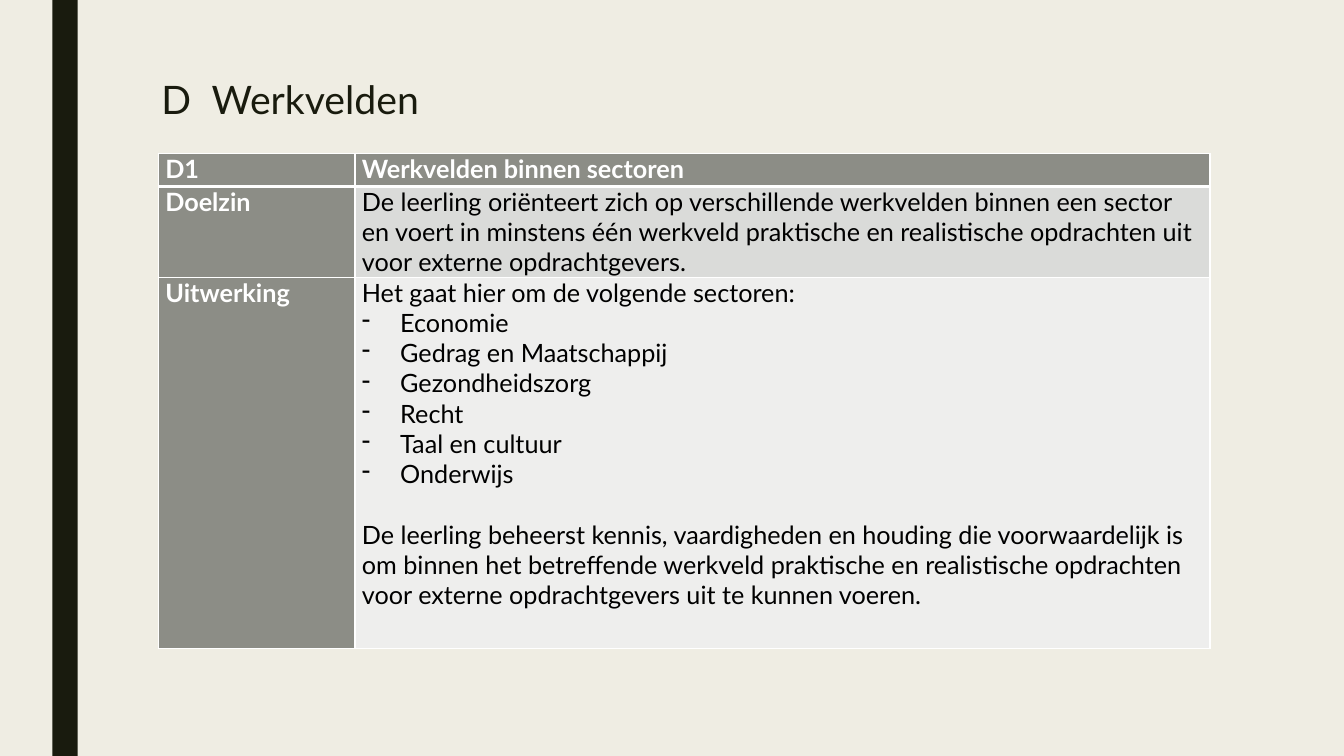
from dataclasses import dataclass

from lxml.etree import SubElement
from pptx import Presentation
from pptx.dml.color import RGBColor
from pptx.enum.shapes import MSO_SHAPE
from pptx.enum.text import MSO_ANCHOR, MSO_AUTO_SIZE, PP_ALIGN
from pptx.oxml import parse_xml
from pptx.oxml.ns import nsdecls, qn
from pptx.util import Inches, Pt

SLIDE_WIDTH, SLIDE_HEIGHT = 13.33, 7.5
FONT = "Lato"
COLORS = {
    "background": "EFEDE3",
    "dark": "191B0E",
    "heading": "8C8D86",
    "goal": "DADBD9",
    "details": "EEEEED",
    "white": "FFFFFF",
    "black": "000000",
}
COLUMN_WIDTHS = (1.95, 8.48)
TABLE_LEFT, TABLE_TOP = 1.57, 1.52
BULLET_INDENT = 0.38
BODY_SIZE = 18


@dataclass(frozen=True)
class Line:
    text: str
    bulleted: bool = False
    space_before: float = 0


@dataclass(frozen=True)
class TableRow:
    label: str
    lines: tuple[Line, ...]
    height: float
    fill: str
    is_header: bool = False


SECTORS = ("Economie", "Gedrag en Maatschappij", "Gezondheidszorg",
           "Recht", "Taal en cultuur", "Onderwijs")
ROWS = (
    TableRow("D1", (Line("Werkvelden binnen sectoren"),), 0.33, "heading", True),
    TableRow("Doelzin", (Line(
        "De leerling oriënteert zich op verschillende werkvelden binnen een sector "
        "en voert in minstens één werkveld praktische en realistische opdrachten uit "
        "voor externe opdrachtgevers."),), 0.9, "goal"),
    TableRow("Uitwerking", (
        Line("Het gaat hier om de volgende sectoren:"),
        *(Line(sector, bulleted=True) for sector in SECTORS),
        Line("De leerling beheerst kennis, vaardigheden en houding die voorwaardelijk is "
             "om binnen het betreffende werkveld praktische en realistische opdrachten "
             "voor externe opdrachtgevers uit te kunnen voeren.", space_before=21.6),
    ), 3.68, "details"),
)


def color(name: str) -> RGBColor:
    return RGBColor.from_string(COLORS[name])


def format_font(paragraph, size: float, color_name: str, bold: bool = False) -> None:
    font = paragraph.font
    font.name, font.size, font.bold = FONT, Pt(size), bold
    font.color.rgb = color(color_name)


def add_bullet(paragraph) -> None:
    properties = paragraph._p.get_or_add_pPr()
    properties.set("marL", str(Inches(BULLET_INDENT)))
    properties.set("indent", str(-Inches(BULLET_INDENT)))
    SubElement(properties, qn("a:buChar")).set("char", "-")


def set_borders(cell, top: float, bottom: float) -> None:
    properties = cell._tc.get_or_add_tcPr()
    widths = {"lnL": 1, "lnR": 1, "lnT": top, "lnB": bottom}
    for index, (side, width) in enumerate(widths.items()):
        properties.insert(index, parse_xml(
            f'<a:{side} {nsdecls("a")} w="{Pt(width)}"><a:solidFill>'
            f'<a:srgbClr val="{COLORS["white"]}"/></a:solidFill></a:{side}>'))


def fill_cell(cell, lines: tuple[Line, ...], fill: str, heading: bool) -> None:
    cell.fill.solid()
    cell.fill.fore_color.rgb = color(fill)
    cell.margin_left = cell.margin_right = Inches(0.07)
    cell.margin_top = cell.margin_bottom = 0
    frame = cell.text_frame
    for index, line in enumerate(lines):
        paragraph = frame.add_paragraph() if index else frame.paragraphs[0]
        paragraph.text = line.text
        if line.space_before:
            paragraph.space_before = Pt(line.space_before)
        if line.bulleted:
            add_bullet(paragraph)
        format_font(paragraph, BODY_SIZE, "white" if heading else "black", heading)


def add_side_bar(page) -> None:
    bar = page.shapes.add_shape(MSO_SHAPE.RECTANGLE, Inches(0.52), 0,
                                Inches(0.25), Inches(SLIDE_HEIGHT))
    bar.shadow.inherit = False
    bar.fill.solid()
    bar.fill.fore_color.rgb = color("dark")
    bar.line.fill.background()


def format_title(page) -> None:
    title = page.shapes.title
    title.left, title.top = Inches(1.5), Inches(0.75)
    title.width, title.height = Inches(10.5), Inches(0.7)
    frame = title.text_frame
    frame.auto_size = MSO_AUTO_SIZE.NONE
    frame.vertical_anchor = MSO_ANCHOR.TOP
    paragraph = frame.paragraphs[0]
    paragraph.text = "D\tWerkvelden"
    paragraph.alignment = PP_ALIGN.LEFT
    paragraph.line_spacing = 0.89
    format_font(paragraph, 28, "dark")


def add_goal_table(page) -> None:
    table = page.shapes.add_table(
        len(ROWS), len(COLUMN_WIDTHS), Inches(TABLE_LEFT), Inches(TABLE_TOP),
        Inches(sum(COLUMN_WIDTHS)), Inches(sum(row.height for row in ROWS))).table
    table.first_row = table.horz_banding = False
    for column, width in zip(table.columns, COLUMN_WIDTHS):
        column.width = Inches(width)
    for index, row in enumerate(ROWS):
        table.rows[index].height = Inches(row.height)
        label, content = table.rows[index].cells
        fill_cell(label, (Line(row.label),), "heading", True)
        fill_cell(content, row.lines, row.fill, row.is_header)
        for cell in (label, content):
            set_borders(cell, top=3 if index == 1 else 1, bottom=3 if row.is_header else 1)


def main() -> None:
    deck = Presentation()
    deck.slide_width, deck.slide_height = Inches(SLIDE_WIDTH), Inches(SLIDE_HEIGHT)
    page = deck.slides.add_slide(deck.slide_layouts[5])
    page.background.fill.solid()
    page.background.fill.fore_color.rgb = color("background")
    add_side_bar(page)
    format_title(page)
    add_goal_table(page)
    deck.save("out.pptx")


if __name__ == "__main__":
    main()
